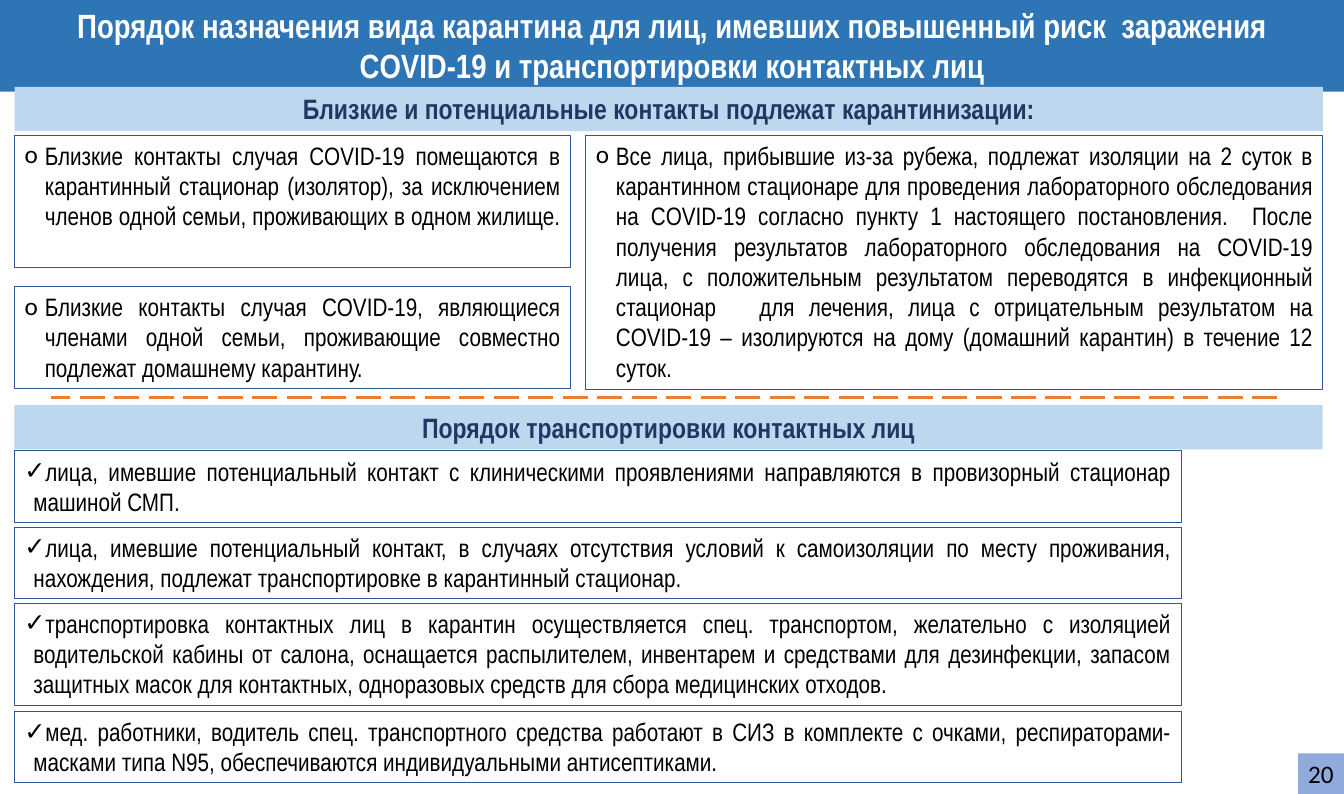
from pptx import Presentation
from pptx.dml.color import RGBColor
from pptx.enum.dml import MSO_LINE
from pptx.enum.shapes import MSO_CONNECTOR, MSO_SHAPE
from pptx.enum.text import MSO_ANCHOR, MSO_AUTO_SIZE, PP_ALIGN as Align
from pptx.oxml.ns import qn
from pptx.util import Pt
from lxml.etree import SubElement

BODY = dict(name="Arial Narrow", size=Pt(18), bold=False, color="000000")
HEADING = dict(name="Arial Narrow", size=Pt(20), bold=True, color="203864")
TITLE = dict(name="Arial Narrow", size=Pt(24), bold=True, color="FFFFFF")
NUMBER = dict(name="Calibri", size=Pt(18), bold=False, color="000000")

TITLE_LINES = [
    "Порядок назначения вида карантина для лиц, имевших повышенный риск  заражения",
    "COVID-19 и транспортировки контактных лиц",
]
FAMILY_APART = (
    "Близкие контакты случая COVID-19 помещаются в карантинный стационар (изолятор), "
    "за исключением членов одной семьи, проживающих в одном жилище. "
)
FAMILY_TOGETHER = (
    "Близкие контакты случая COVID-19, являющиеся членами одной семьи, "
    "проживающие совместно подлежат домашнему карантину."
)
ARRIVALS = (
    "Все лица, прибывшие из-за рубежа, подлежат изоляции на 2 суток в карантинном "
    "стационаре для проведения лабораторного обследования на COVID-19 согласно пункту 1 "
    "настоящего постановления.  После получения результатов лабораторного обследования "
    "на COVID-19 лица, с положительным результатом переводятся в инфекционный "
    "стационар   для лечения, лица с отрицательным результатом на COVID-19 – "
    "изолируются на дому (домашний карантин) в течение 12 суток."
)
# Transport rules: top, height, text
TRANSPORT_RULES = [
    (322, 51, "лица, имевшие потенциальный контакт с клиническими проявлениями "
              "направляются в провизорный стационар машиной СМП."),
    (376.5, 51, "лица, имевшие потенциальный контакт, в случаях отсутствия условий к "
                "самоизоляции по месту проживания, нахождения, подлежат транспортировке "
                "в карантинный стационар."),
    (430.7, 73, "транспортировка контактных лиц в карантин осуществляется спец. "
                "транспортом, желательно с изоляцией водительской кабины от салона, "
                "оснащается распылителем, инвентарем и средствами для дезинфекции, "
                "запасом защитных масок для контактных, одноразовых средств для сбора "
                "медицинских отходов."),
    (508, 51, "мед. работники, водитель спец. транспортного средства работают в СИЗ в "
              "комплекте с очками, респираторами-масками типа N95, обеспечиваются "
              "индивидуальными антисептиками."),
]


def rgb(hex_color):
    return RGBColor.from_string(hex_color)


def paint(part, color):
    part.fill.solid()
    part.fill.fore_color.rgb = rgb(color)


def write(part, lines, style, align, wrap=True):
    frame = part.text_frame
    frame.auto_size = MSO_AUTO_SIZE.NONE
    frame.word_wrap = wrap
    frame.vertical_anchor = MSO_ANCHOR.TOP
    frame.text = "\n".join(lines)
    for paragraph in frame.paragraphs:
        paragraph.alignment = align
        for key, value in style.items():
            if key == "color":
                paragraph.font.color.rgb = rgb(value)
                paragraph.runs[0].font.color.rgb = rgb(value)
            else:
                setattr(paragraph.runs[0].font, key, value)


def add_panel(slide, box, fill=None, border=None):
    panel = slide.shapes.add_shape(MSO_SHAPE.RECTANGLE, *map(Pt, box))
    panel.shadow.inherit = False
    if fill:
        paint(panel, fill)
    else:
        panel.fill.background()
    if border:
        panel.line.color.rgb = rgb(border)
        panel.line.width = Pt(0.75)
    else:
        panel.line.fill.background()
    return panel


def add_heading(slide, box, text):
    write(add_panel(slide, box, fill="BDD7EE"), [text], HEADING, Align.CENTER)


def add_rule(slide, box, text, bullet, indent):
    rule = add_panel(slide, box, border="2F5597")
    write(rule, [text], BODY, Align.JUSTIFY)
    properties = rule.text_frame.paragraphs[0]._p.get_or_add_pPr()
    properties.set("marL", str(Pt(indent)))
    properties.set("indent", str(-Pt(indent)))
    # Bullet goes ahead of the default run properties
    defaults = properties.find(qn("a:defRPr"))
    for tag, key, value in (("a:buFont", "typeface", "Calibri"), ("a:buChar", "char", bullet)):
        mark = SubElement(properties, qn(tag))
        mark.set(key, value)
        defaults.addprevious(mark)


def add_title(slide, box):
    title = slide.shapes.title
    for side, value in zip(("left", "top", "width", "height"), box):
        setattr(title, side, Pt(value))
    paint(title, "2E75B6")
    write(title, TITLE_LINES, TITLE, Align.CENTER)


def add_quarantine(slide, left, top, width):
    add_heading(slide, (left, top, width, 31.7),
                "Близкие и потенциальные контакты подлежат карантинизации:")
    rules_top, near_width, gap = top + 34.5, 397, 11
    right = left + near_width + gap
    add_rule(slide, (right, rules_top, left + width - right, 181.5), ARRIVALS, "o", 14.4)
    add_rule(slide, (left, rules_top, near_width, 94.5), FAMILY_APART, "o", 14.4)
    add_rule(slide, (left, rules_top + 108, near_width, 73), FAMILY_TOGETHER, "o", 14.4)


def add_divider(slide, left, top, width):
    divider = slide.shapes.add_connector(
        MSO_CONNECTOR.STRAIGHT, Pt(left + width), Pt(top), Pt(left), Pt(top))
    divider.line.color.rgb = rgb("ED7D31")
    divider.line.width = Pt(2.25)
    divider.line.dash_style = MSO_LINE.LONG_DASH
    SubElement(divider._element.spPr, qn("a:effectLst"))


def add_transport(slide, left, top, width):
    add_heading(slide, (left, top, width, 31.7), "Порядок транспортировки контактных лиц")
    for rule_top, height, text in TRANSPORT_RULES:
        add_rule(slide, (left, rule_top, width - 101, height), text, "✓", 6.5)


def add_page_number(slide, box):
    write(add_panel(slide, box, fill="8FAADC"), ["20"], NUMBER, Align.LEFT, wrap=False)


def main():
    deck = Presentation()
    deck.slide_width, deck.slide_height = Pt(960), Pt(567)
    slide = deck.slides.add_slide(deck.slide_layouts[5])
    add_title(slide, (0, 0, 960, 65.5))
    add_quarantine(slide, 10.5, 62, 934.5)
    add_divider(slide, 36.5, 283.7, 876)
    add_transport(slide, 10.3, 289.3, 934.5)
    add_page_number(slide, (927.2, 538, 32.8, 29))
    deck.save("out.pptx")


if __name__ == "__main__":
    main()
